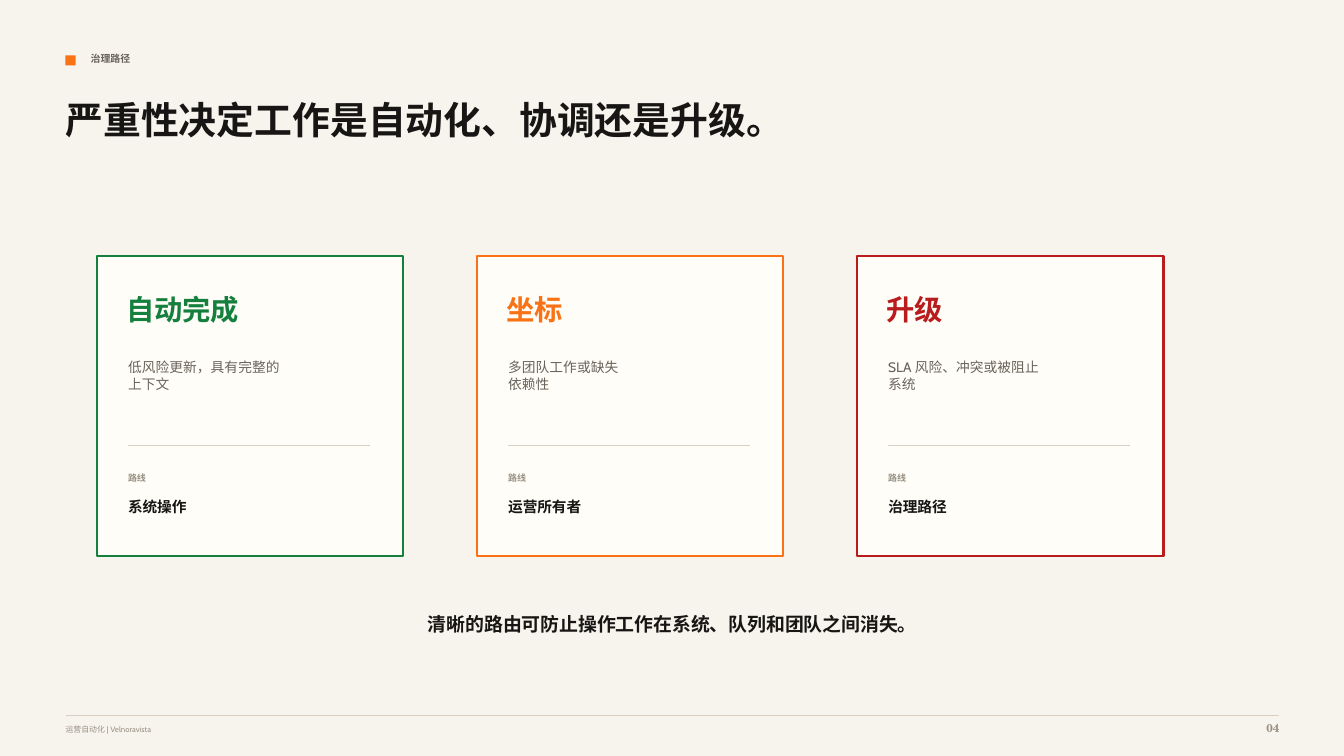
from dataclasses import dataclass

from lxml import etree
from pptx import Presentation
from pptx import util as u
from pptx.dml.color import RGBColor
from pptx.enum import shapes, text
from pptx.oxml import ns


@dataclass(frozen=True)
class Theme:
    """Colours, fonts and text styles of the slide."""
    paper: str = "F7F4EE"
    card: str = "FFFDF8"
    ink: str = "171614"
    body: str = "69635A"
    muted: str = "9A9184"
    rule: str = "D9D0C3"
    green: str = "15803D"
    orange: str = "F97316"
    red: str = "B91C1C"
    serif: str = "TeX Gyre Schola"
    sans: str = "Cabin"

    def style(self, role):
        """Return the font values and colour for a text role."""
        name, size, bold, color = {
            "eyebrow": (self.sans, 7.1, True, self.body),
            "title": (self.serif, 27, True, self.ink),
            "heading": (self.serif, 20.2, True, self.ink),
            "description": (self.sans, 9.8, False, self.body),
            "label": (self.sans, 6.4, True, self.muted),
            "route": (self.sans, 10.5, True, self.ink),
            "takeaway": (self.serif, 13.5, True, self.ink),
            "footer": (self.sans, 5.6, False, self.muted),
            "number": (self.serif, 8.2, True, self.muted),
        }[role]
        return {"name": name, "size": u.Pt(size), "bold": bold}, color


THEME = Theme()
CARD_LEFT, CARD_STEP = 0.96, 3.77
CARDS = [
    ("自动完成", ["低风险更新，具有完整的", "上下文"], "系统操作", THEME.green),
    ("坐标", ["多团队工作或缺失", "依赖性"], "运营所有者", THEME.orange),
    ("升级", ["SLA 风险、冲突或被阻止", "系统"], "治理路径", THEME.red),
]


def set_values(target, values):
    """Set each named attribute on the target."""
    for name, value in values.items():
        setattr(target, name, value)


def write_text(shape, lines, role, align=text.PP_ALIGN.LEFT, color=None):
    """Fill a shape with one styled paragraph per line."""
    frame = shape.text_frame
    frame.text = "\n".join(lines)
    set_values(frame, {
        "margin_left": 0, "margin_top": 0, "margin_right": 0, "margin_bottom": 0,
        "word_wrap": True, "auto_size": text.MSO_AUTO_SIZE.NONE,
        "vertical_anchor": text.MSO_ANCHOR.TOP,
    })
    font_values, role_color = THEME.style(role)
    for paragraph in frame.paragraphs:
        paragraph.alignment = align
        set_values(paragraph.font, font_values)
        paragraph.font.color.rgb = RGBColor.from_string(color or role_color)


def add_text(slide, box, lines, role, **options):
    """Add a text box at left, top, width, height."""
    shape = slide.shapes.add_textbox(*map(u.Inches, box))
    write_text(shape, lines, role, **options)


def add_title(slide, box, line):
    """Place and fill the title placeholder."""
    title = slide.shapes.title
    set_values(title, dict(zip(("left", "top", "width", "height"), map(u.Inches, box))))
    write_text(title, [line], "title")


def add_box(slide, box, fill, outline=None):
    """Add a flat rectangle with an optional outline."""
    shape = slide.shapes.add_shape(shapes.MSO_SHAPE.RECTANGLE, *map(u.Inches, box))
    shape.shadow.inherit = False
    shape.fill.solid()
    shape.fill.fore_color.rgb = RGBColor.from_string(fill)
    if outline:
        shape.line.color.rgb = RGBColor.from_string(outline)
        shape.line.width = u.Pt(1.5)
    else:
        shape.line.fill.background()


def add_rule(slide, left, top, width):
    """Add a thin horizontal rule."""
    ends = map(u.Inches, (left, top, left + width, top))
    rule = slide.shapes.add_connector(shapes.MSO_CONNECTOR.STRAIGHT, *ends)
    rule.line.color.rgb = RGBColor.from_string(THEME.rule)
    rule.line.width = u.Pt(0.75)
    etree.SubElement(rule.element.spPr, ns.qn("a:effectLst"))


def add_card(slide, left, heading, description, route, accent):
    """Add one severity card with its route."""
    inner = left + 0.31
    add_box(slide, (left, 2.54, 3.04, 2.98), THEME.card, accent)
    add_text(slide, (left + 0.29, 2.9, 2.29, 0.35), [heading], "heading", color=accent)
    add_text(slide, (inner, 3.56, 2.33, 0.52), description, "description")
    add_rule(slide, inner, 4.42, 2.4)
    add_text(slide, (inner, 4.69, 1.67, 0.15), ["路线"], "label")
    add_text(slide, (inner, 4.94, 2.29, 0.23), [route], "route")


def main():
    """Build and save the slide."""
    presentation = Presentation()
    presentation.slide_width = u.Inches(13.33)
    presentation.slide_height = u.Inches(7.5)
    slide = presentation.slides.add_slide(presentation.slide_layouts[5])
    slide.background.fill.solid()
    slide.background.fill.fore_color.rgb = RGBColor.from_string(THEME.paper)

    add_box(slide, (0.65, 0.55, 0.1, 0.1), THEME.orange)
    add_text(slide, (0.9, 0.52, 6.46, 0.19), ["治理路径"], "eyebrow")
    add_title(slide, (0.65, 0.96, 9.38, 1.02), "严重性决定工作是自动化、协调还是升级。")

    for index, card in enumerate(CARDS):
        add_card(slide, CARD_LEFT + index * CARD_STEP, *card)

    add_text(slide, (1.67, 6.08, 10, 0.29),
             ["清晰的路由可防止操作工作在系统、队列和团队之间消失。"],
             "takeaway", align=text.PP_ALIGN.CENTER)
    add_rule(slide, 0.65, 7.1, 12.04)
    add_text(slide, (0.65, 7.19, 7.92, 0.15), ["运营自动化 | Velnoravista"], "footer")
    add_text(slide, (12.19, 7.15, 0.5, 0.19), ["04"], "number", align=text.PP_ALIGN.RIGHT)
    presentation.save("out.pptx")


if __name__ == "__main__":
    main()
